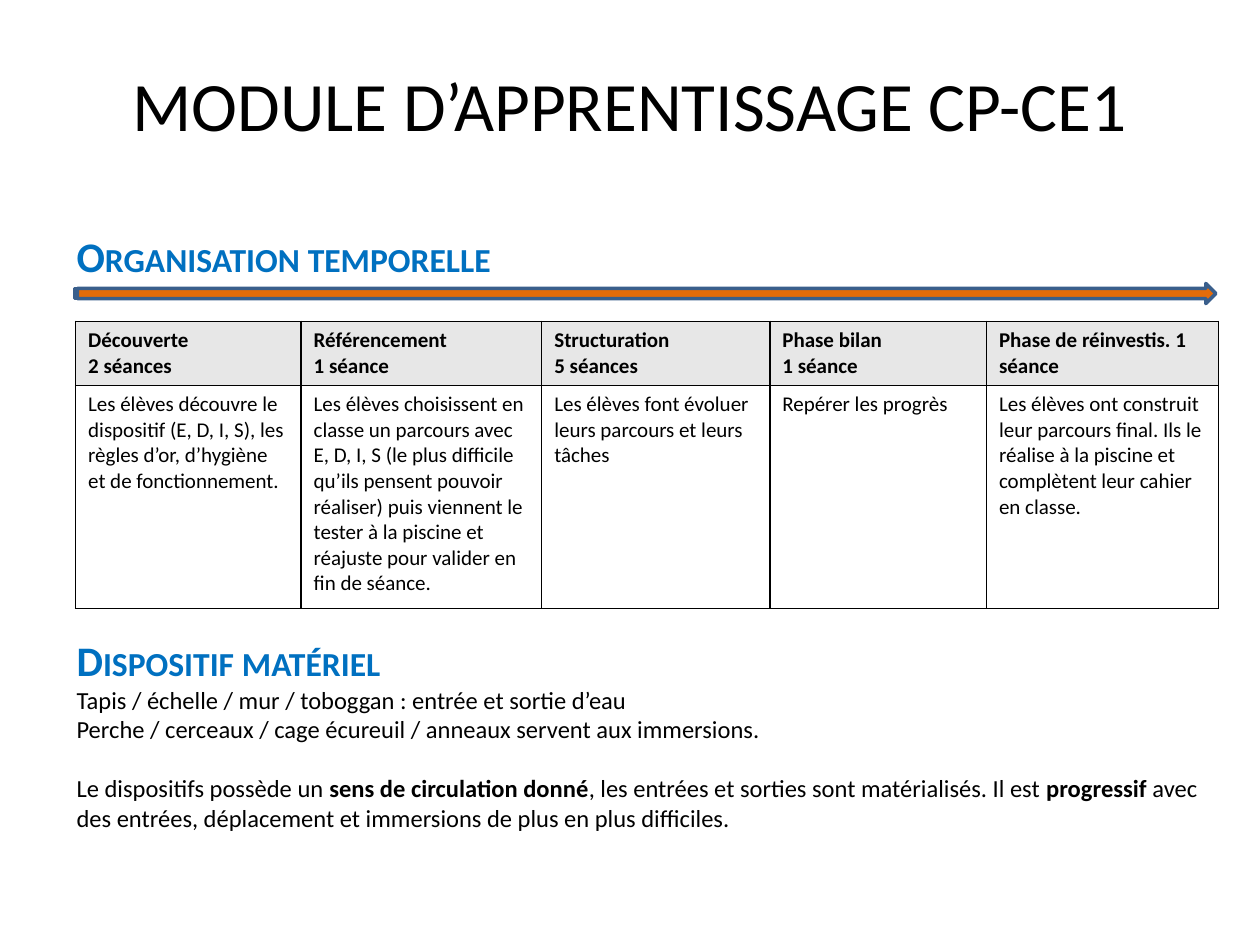
from lxml import etree
from pptx import Presentation
from pptx.dml import color
from pptx.enum import shapes, text
from pptx.oxml import ns
from pptx.util import Inches, Pt

FONT = "Calibri"
BLACK, BLUE = "000000", "0070C0"
PHASES = [
    (1.79, ["Découverte", "2 séances"],
     "Les élèves découvre le dispositif (E, D, I, S), les règles d’or, d’hygiène et de fonctionnement."),
    (1.91, ["Référencement", "1 séance"],
     "Les élèves choisissent en classe un parcours avec E, D, I, S (le plus difficile qu’ils pensent "
     "pouvoir réaliser) puis viennent le tester à la piscine et réajuste pour valider en fin de séance."),
    (1.81, ["Structuration", "5 séances"],
     "Les élèves font évoluer leurs parcours et leurs tâches"),
    (1.72, ["Phase bilan", "1 séance"], "Repérer les progrès"),
    (1.84, ["Phase de réinvestis. 1 séance"],
     "Les élèves ont construit leur parcours final. Ils le réalise à la piscine et complètent leur "
     "cahier en classe."),
]
HEADING = {"size": Pt(24), "bold": True}
DETAIL = {"size": Pt(14), "bold": False}
SECTIONS = [
    (0, HEADING, ["Organisation temporelle"]),
    (202, HEADING, ["Dispositif matériel"]),
    (0, DETAIL, ["Tapis / échelle / mur / toboggan : entrée et sortie d’eau"]),
    (0, DETAIL, ["Perche / cerceaux / cage écureuil / anneaux servent aux immersions."]),
    (17, DETAIL, ["Le dispositifs possède un ", "sens de circulation donné",
                  ", les entrées et sorties sont matérialisés. Il est ", "progressif",
                  " avec des entrées, déplacement et immersions de plus en plus difficiles."]),
]


def rgb(value):
    """Return the colour for a hex string."""
    return color.RGBColor.from_string(value)


def add_run(paragraph, words, ink=BLACK, **formats):
    """Append a formatted run and return it."""
    run = paragraph.add_run()
    run.text = words
    for name, value in {"name": FONT, **formats}.items():
        setattr(run.font, name, value)
    run.font.color.rgb = rgb(ink)
    return run


def place(part, box):
    """Move a part to a box of left, top, width and height."""
    for name, length in zip(("left", "top", "width", "height"), box):
        setattr(part, name, Inches(length))


def fill_title(slide, box):
    """Fill the title placeholder."""
    title = slide.shapes.title
    place(title, box)
    title.text_frame.vertical_anchor = text.MSO_ANCHOR.MIDDLE
    heading = title.text_frame.paragraphs[0]
    heading.alignment = text.PP_ALIGN.CENTER
    add_run(heading, "MODULE D’APPRENTISSAGE CP-CE1", size=Pt(39.6))


def add_sections(slide, box):
    """Write the two headings and the details, with room for the table."""
    frame = slide.shapes.add_textbox(*map(Inches, box)).text_frame
    frame.word_wrap = True
    for index, (gap, formats, pieces) in enumerate(SECTIONS):
        paragraph = frame.add_paragraph() if index else frame.paragraphs[0]
        paragraph.space_before = Pt(gap)
        for position, words in enumerate(pieces):
            if formats is HEADING:
                run = add_run(paragraph, words, BLUE, **formats)
                run._r.get_or_add_rPr().set("cap", "small")
            else:
                add_run(paragraph, words, **{**formats, "bold": position % 2 == 1})


def add_borders(cell):
    """Draw a thin black line on each side of a cell."""
    properties = cell._tc.get_or_add_tcPr()
    for side in ("lnL", "lnR", "lnT", "lnB"):
        line = etree.SubElement(properties, ns.qn(f"a:{side}"), w=str(Pt(1)))
        solid = etree.SubElement(line, ns.qn("a:solidFill"))
        etree.SubElement(solid, ns.qn("a:srgbClr"), val=BLACK)


def fill_cell(cell, lines, background, bold):
    """Write the lines of a cell and format it."""
    add_borders(cell)
    cell.fill.solid()
    cell.fill.fore_color.rgb = rgb(background)
    for index, words in enumerate(lines):
        frame = cell.text_frame
        paragraph = frame.add_paragraph() if index else frame.paragraphs[0]
        add_run(paragraph, words, size=Pt(12), bold=bold)


def add_phases(slide, box):
    """Add the table of learning phases."""
    table = slide.shapes.add_table(2, len(PHASES), *map(Inches, box)).table
    header_height = 0.51
    for row, height in zip(table.rows, (header_height, box[3] - header_height)):
        row.height = Inches(height)
    for column, (width, header, activity) in enumerate(PHASES):
        table.columns[column].width = Inches(width)
        fill_cell(table.cell(0, column), header, "E7E7E7", True)
        fill_cell(table.cell(1, column), [activity], "FFFFFF", False)


def add_timeline(slide, box):
    """Add the time arrow above the table."""
    arrow = slide.shapes.add_shape(shapes.MSO_SHAPE.STRIPED_RIGHT_ARROW, *map(Inches, box))
    arrow.shadow.inherit = False
    arrow.fill.solid()
    arrow.fill.fore_color.rgb = rgb("E46C0A")
    arrow.line.color.rgb = rgb("3A5F8C")
    arrow.line.width = Pt(2)


def main():
    """Build and save the slide."""
    deck = Presentation()
    deck.slide_width, deck.slide_height = Inches(10), Inches(7.5)
    slide = deck.slides.add_slide(deck.slide_layouts[5])
    fill_title(slide, (0.5, 0.2, 9, 1.25))
    add_sections(slide, (0.51, 1.78, 9.13, 5.15))
    add_phases(slide, (0.6, 2.55, 9.07, 2.28))
    add_timeline(slide, (0.59, 2.25, 9.06, 0.16))
    deck.save("out.pptx")


if __name__ == "__main__":
    main()
